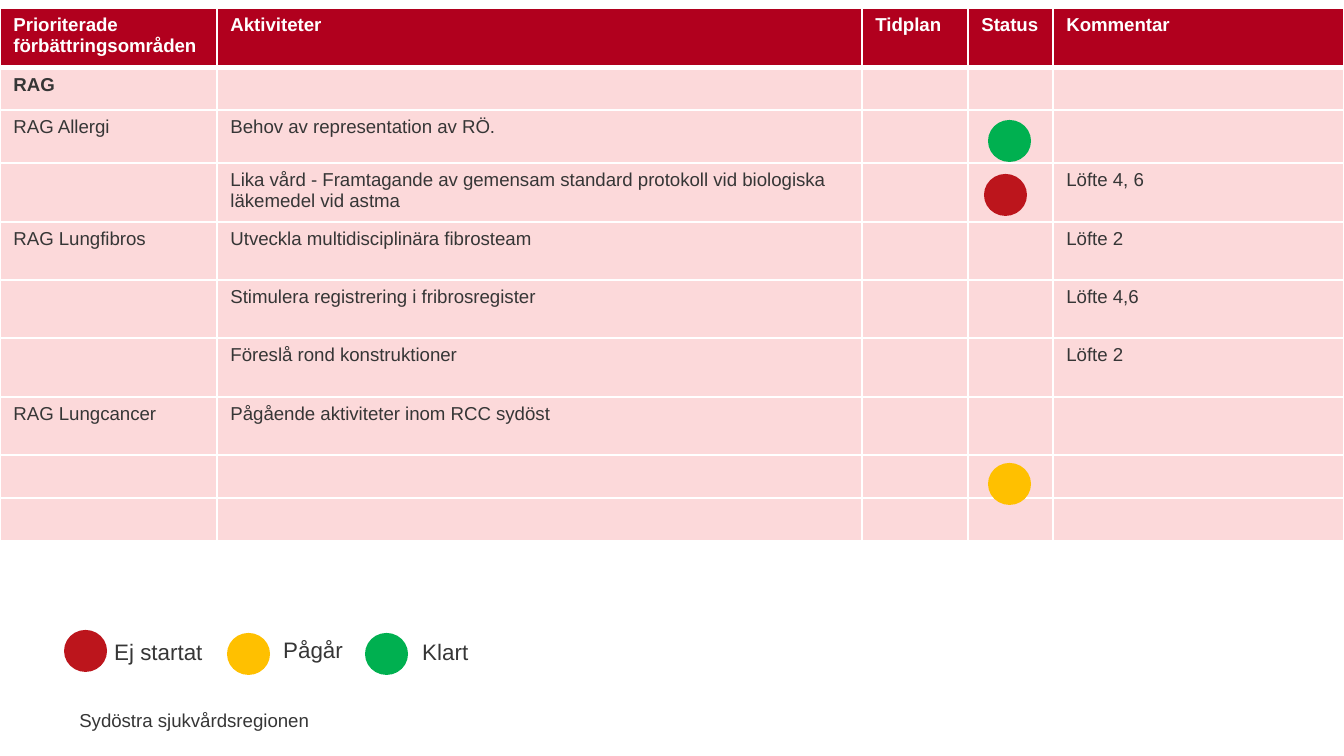
import pptx
import pptx.dml.color
import pptx.enum.shapes
import pptx.enum.text
import pptx.oxml
import pptx.oxml.ns
import pptx.util

EMU_PER_PX = 914400 / 134.4
COLORS = {
    "header": "B1001E", "row": "FCD9DA", "white": "FFFFFF", "text": "363636",
    "not started": "BC151C", "ongoing": "FFC000", "done": "00B050",
}


def px(*lengths):
    return [pptx.util.Emu(round(length * EMU_PER_PX)) for length in lengths]


def style(paragraph, size, color="text", bold=False):
    font = paragraph.font
    font.name = "Arial"
    font.size = pptx.util.Pt(size)
    font.bold = bold
    font.color.rgb = pptx.dml.color.RGBColor.from_string(COLORS[color])


prs = pptx.Presentation()
prs.slide_width, prs.slide_height = px(1344, 756)
slide = prs.slides.add_slide(prs.slide_layouts[6])

# Region name at the foot
region = slide.shapes.add_textbox(*px(64, 702, 258, 36)).text_frame
region.word_wrap = False
region.text = "Sydöstra sjukvårdsregionen"
region.paragraphs[0].alignment = pptx.enum.text.PP_ALIGN.RIGHT
style(region.paragraphs[0], 10)

# Activity plan
column_widths = [217, 645, 106, 85, 291]
row_heights = [60, 42, 53, 59, 58, 58, 59, 58, 43, 43]
plan_rows = [
    ["Prioriterade förbättringsområden", "Aktiviteter", "Tidplan", "Status", "Kommentar"],
    ["RAG", "", "", "", ""],
    ["RAG Allergi", "Behov av representation av RÖ.", "", "", ""],
    ["", "Lika vård - Framtagande av gemensam standard protokoll vid biologiska "
         "läkemedel vid astma", "", "", "Löfte 4, 6"],
    ["RAG Lungfibros", "Utveckla multidisciplinära fibrosteam", "", "", "Löfte 2"],
    ["", "Stimulera registrering i fribrosregister", "", "", "Löfte 4,6"],
    ["", "Föreslå rond konstruktioner", "", "", "Löfte 2"],
    ["RAG Lungcancer", "Pågående aktiviteter inom RCC sydöst", "", "", ""],
    ["", "", "", "", ""],
    ["", "", "", "", ""],
]
plan = slide.shapes.add_table(
    len(row_heights), len(column_widths),
    *px(0, 8, sum(column_widths), sum(row_heights))).table
for column, width in zip(plan.columns, px(*column_widths)):
    column.width = width
for row, height in zip(plan.rows, px(*row_heights)):
    row.height = height

for r, texts in enumerate(plan_rows):
    for c, text in enumerate(texts):
        cell = plan.cell(r, c)
        cell.text = text
        cell.fill.solid()
        cell.fill.fore_color.rgb = pptx.dml.color.RGBColor.from_string(
            COLORS["header" if r == 0 else "row"])
        paragraph = cell.text_frame.paragraphs[0]
        style(paragraph, 10, "white" if r == 0 else "text", bold=r < 2)
        if not text:
            paragraph._p.append(pptx.oxml.parse_xml(
                f'<a:endParaRPr {pptx.oxml.ns.nsdecls("a")} sz="1000"/>'))

        # Thick rule between header and body, thin lines elsewhere
        widths = {"lnL": 1, "lnR": 1, "lnT": 3 if r == 1 else 1, "lnB": 3 if r == 0 else 1}
        for position, (side, width) in enumerate(widths.items()):
            cell._tc.get_or_add_tcPr().insert(position, pptx.oxml.parse_xml(
                f'<a:{side} {pptx.oxml.ns.nsdecls("a")} w="{pptx.util.Pt(width)}">'
                f'<a:solidFill><a:srgbClr val="{COLORS["white"]}"/></a:solidFill></a:{side}>'))

# Status dots in the table, then those of the legend
status_dots = [
    (988, 120, "done"), (984, 174, "not started"), (988, 463, "ongoing"),
    (64, 630, "not started"), (227, 633, "ongoing"), (365, 633, "done"),
]
for left, top, status in status_dots:
    dot = slide.shapes.add_shape(
        pptx.enum.shapes.MSO_SHAPE.OVAL, *px(left, top, 43, 42))
    dot.shadow.inherit = False
    dot.fill.solid()
    dot.fill.fore_color.rgb = pptx.dml.color.RGBColor.from_string(COLORS[status])
    dot.line.fill.background()

legend_labels = [
    ("Ej startat", 101, 632, 117), ("Pågår", 270, 630, 94), ("Klart", 409, 632, 146),
]
for label, left, top, width in legend_labels:
    legend = slide.shapes.add_textbox(*px(left, top, width, 41)).text_frame
    legend.word_wrap = label != "Ej startat"
    legend.text = label
    style(legend.paragraphs[0], 12)

prs.save("out.pptx")
